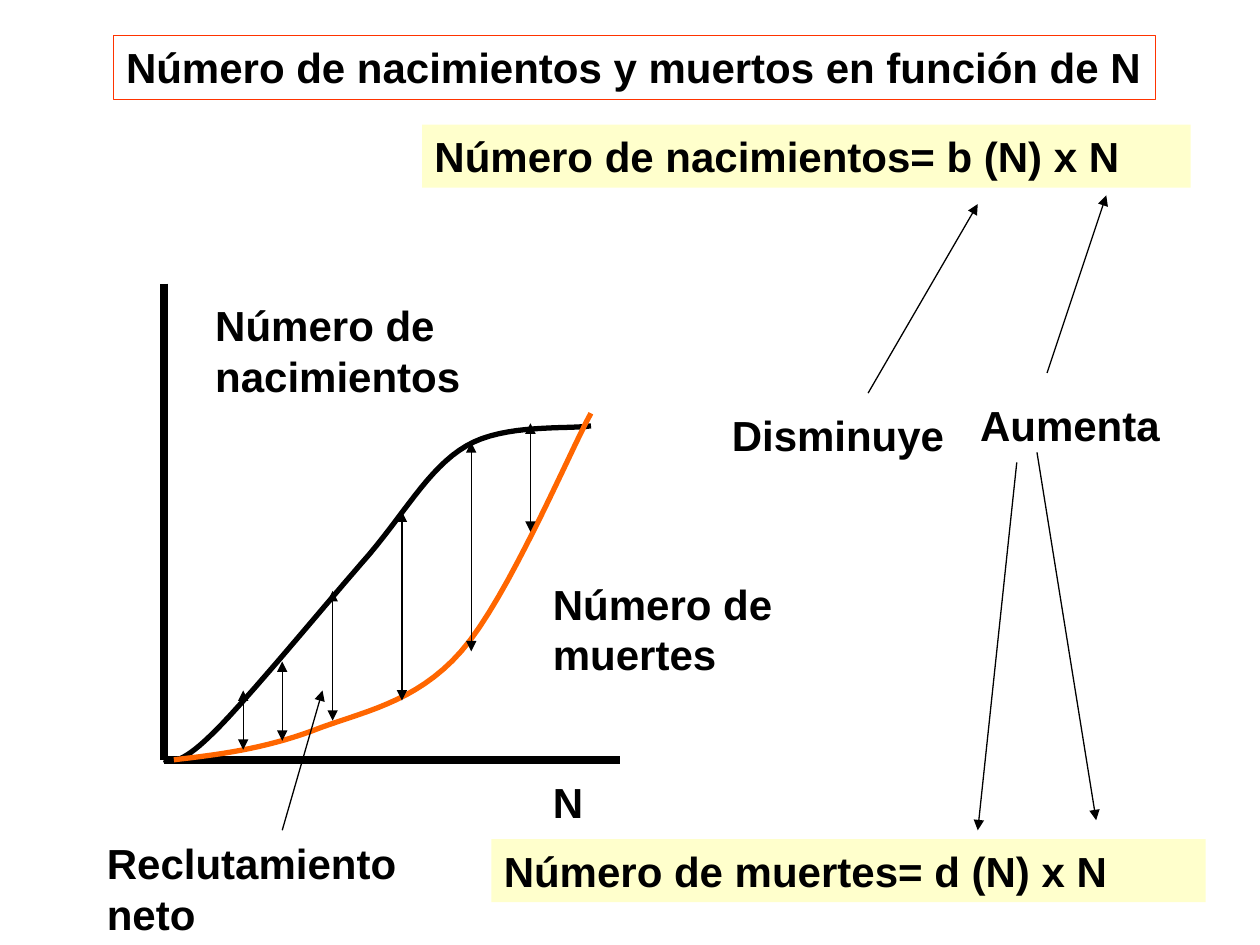
from lxml import etree
from pptx import Presentation
from pptx import util as u
from pptx.dml.color import RGBColor
from pptx.enum import shapes, text
from pptx.oxml.ns import qn

COLORS = {"ink": "000000", "deaths": "FF6600", "frame": "FF3300",
          "paper": "FFFFFF", "formula": "FFFFCC"}
FONT = {"name": "Arial", "size": u.Pt(24), "bold": True}
FRAME = {"vertical_anchor": text.MSO_ANCHOR.TOP,
         "auto_size": text.MSO_AUTO_SIZE.NONE,
         "margin_left": u.Inches(0.1), "margin_right": u.Inches(0.1),
         "margin_top": u.Inches(0.05), "margin_bottom": u.Inches(0.05)}
CURVE_STEPS = 16


def bezier(p0, p1, p2, p3, t):
    s = 1 - t
    return tuple(s**3 * a + 3 * s * s * t * b + 3 * s * t * t * c + t**3 * d
                 for a, b, c, d in zip(p0, p1, p2, p3))


class Sketch:
    def __init__(self, slide):
        self.slide = slide

    def color(self, name):
        return RGBColor.from_string(COLORS[name])

    def letter(self, shape, words, wrap=True):
        frame = shape.text_frame
        frame.text = words
        for key, value in FRAME.items():
            setattr(frame, key, value)
        frame.word_wrap = wrap
        paragraph = frame.paragraphs[0]
        paragraph.alignment = text.PP_ALIGN.LEFT
        font = paragraph.runs[0].font
        for key, value in FONT.items():
            setattr(font, key, value)
        font.color.rgb = self.color("ink")

    def fill(self, shape, name):
        shape.fill.solid()
        shape.fill.fore_color.rgb = self.color(name)

    def stroke(self, shape, name, width):
        shape.line.color.rgb = self.color(name)
        shape.line.width = u.Pt(width)

    def title(self, words, *box):
        heading = self.slide.shapes.title
        for key, value in zip(("left", "top", "width", "height"), box):
            setattr(heading, key, u.Inches(value))
        self.fill(heading, "paper")
        self.stroke(heading, "frame", 0.75)
        self.letter(heading, words, wrap=False)

    def label(self, words, *box):
        self.letter(self.slide.shapes.add_textbox(*map(u.Inches, box)), words)

    def formula(self, words, *box):
        band = self.slide.shapes.add_shape(
            shapes.MSO_SHAPE.RECTANGLE, *map(u.Inches, box))
        band.shadow.inherit = False
        self.fill(band, "formula")
        band.line.fill.background()
        self.letter(band, words)

    def line(self, start, end, width=0.75, heads=()):
        link = self.slide.shapes.add_connector(
            shapes.MSO_CONNECTOR.STRAIGHT, *map(u.Inches, (*start, *end)))
        self.stroke(link, "ink", width)
        properties = link.element.spPr
        for head in heads:
            etree.SubElement(properties.find(qn("a:ln")), qn(f"a:{head}"), type="triangle")
        etree.SubElement(properties, qn("a:effectLst"))

    def curve(self, knots, name):
        points = [bezier(*knots[i:i + 4], step / CURVE_STEPS)
                  for i in range(0, len(knots) - 1, 3)
                  for step in range(1, CURVE_STEPS + 1)]
        builder = self.slide.shapes.build_freeform(
            *map(u.Inches, knots[0]), scale=1.0)
        builder.add_line_segments(
            [(u.Inches(x), u.Inches(y)) for x, y in points], close=False)
        trace = builder.convert_to_shape()
        trace.shadow.inherit = False
        trace.fill.background()
        self.stroke(trace, name, 3)


def main():
    deck = Presentation()
    deck.slide_width, deck.slide_height = u.Inches(10), u.Inches(7.5)
    sketch = Sketch(deck.slides.add_slide(deck.slide_layouts[5]))

    sketch.title("Número de nacimientos y muertos en función de N", 0.9, 0.28, 8.27, 0.51)

    origin = (1.3, 6.03)
    for axis_start, axis_end in (((1.3, 2.25), origin), (origin, (4.92, 6.03))):
        sketch.line(axis_start, axis_end, 4.5)

    births = [origin, (1.37, 6.05), (1.45, 6.06), (1.71, 5.8),
              (1.97, 5.54), (2.54, 4.85), (2.87, 4.47),
              (3.2, 4.1), (3.39, 3.72), (3.7, 3.54),
              (4, 3.36), (4.52, 3.41), (4.69, 3.38)]
    deaths = [(1.38, 6.03), (1.74, 5.99), (2.1, 5.94), (2.48, 5.8),
              (2.86, 5.65), (3.29, 5.59), (3.66, 5.17),
              (4.03, 4.75), (4.52, 3.59), (4.69, 3.28)]
    sketch.curve(births, "ink")
    sketch.curve(deaths, "deaths")

    for words, *box in (
            ("Número de nacimientos= b (N) x N", 3.35, 0.99, 6.1, 0.5),
            ("Número de muertes= d (N) x N", 3.9, 6.66, 5.67, 0.5)):
        sketch.formula(words, *box)

    for words, *box in (
            ("Número de nacimientos", 1.61, 2.33, 2.52, 0.9),
            ("Número de muertes", 4.29, 4.54, 2.2, 0.9),
            ("Disminuye", 5.71, 3.2, 2.13, 0.5),
            ("Aumenta", 7.68, 3.12, 1.85, 0.5),
            ("Reclutamiento neto", 0.75, 6.6, 2.84, 0.9),
            ("N", 4.29, 6.11, 0.87, 0.5)):
        sketch.label(words, *box)

    for cause, effect in (
            ((6.89, 3.12), (7.76, 1.62)), ((8.31, 2.96), (8.78, 1.55)),
            ((8.23, 3.59), (8.7, 6.51)), ((8.07, 3.67), (7.76, 6.59)),
            ((2.24, 6.59), (2.56, 5.48))):
        sketch.line(cause, effect, heads=("tailEnd",))

    for n, born, dead in (
            (1.93, 5.48, 5.95), (2.24, 5.25, 5.88), (2.64, 4.69, 5.72),
            (3.19, 4.06, 5.56), (3.74, 3.51, 5.17), (4.21, 3.36, 4.22)):
        sketch.line((n, born), (n, dead), heads=("headEnd", "tailEnd"))

    deck.save("out.pptx")


if __name__ == "__main__":
    main()
